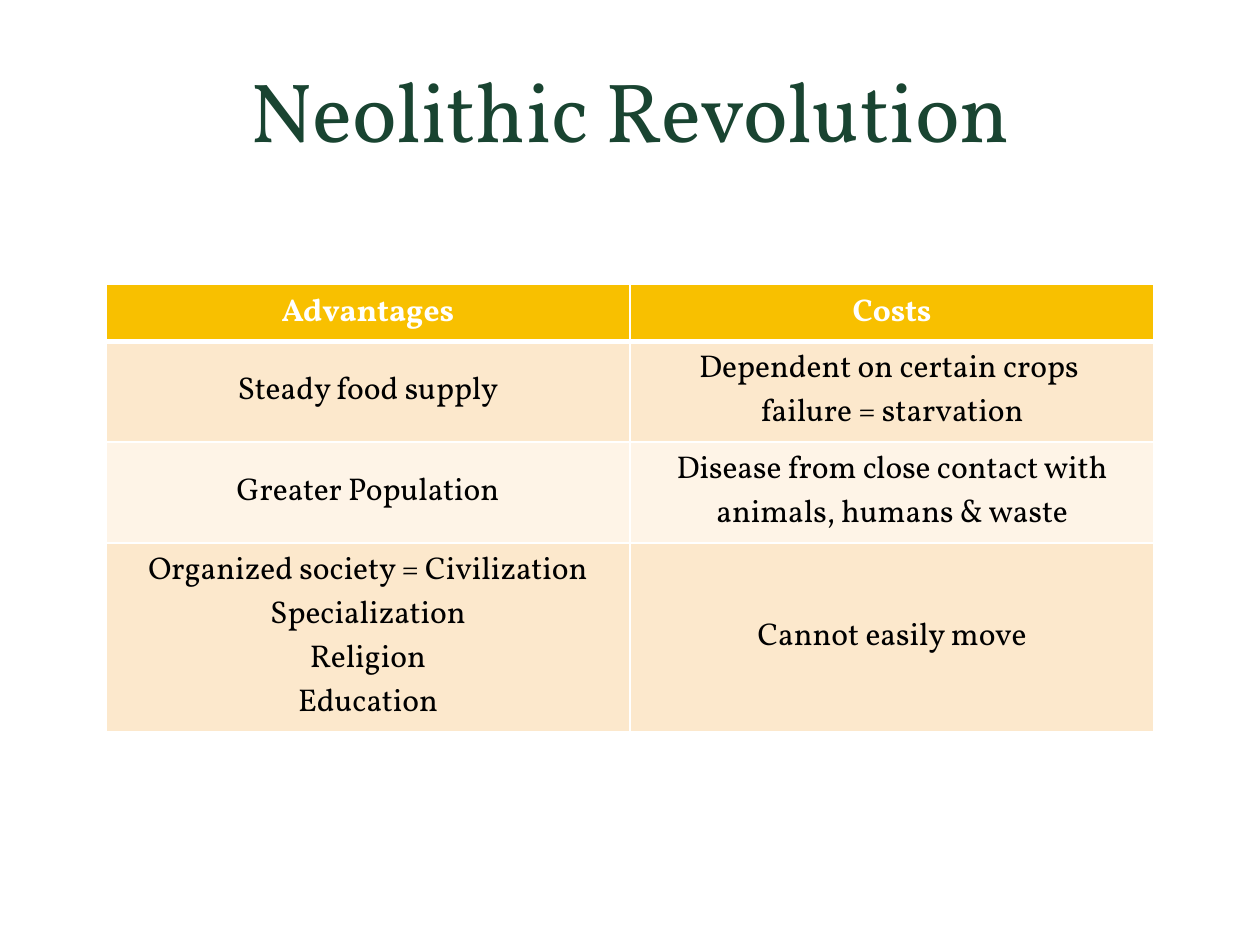
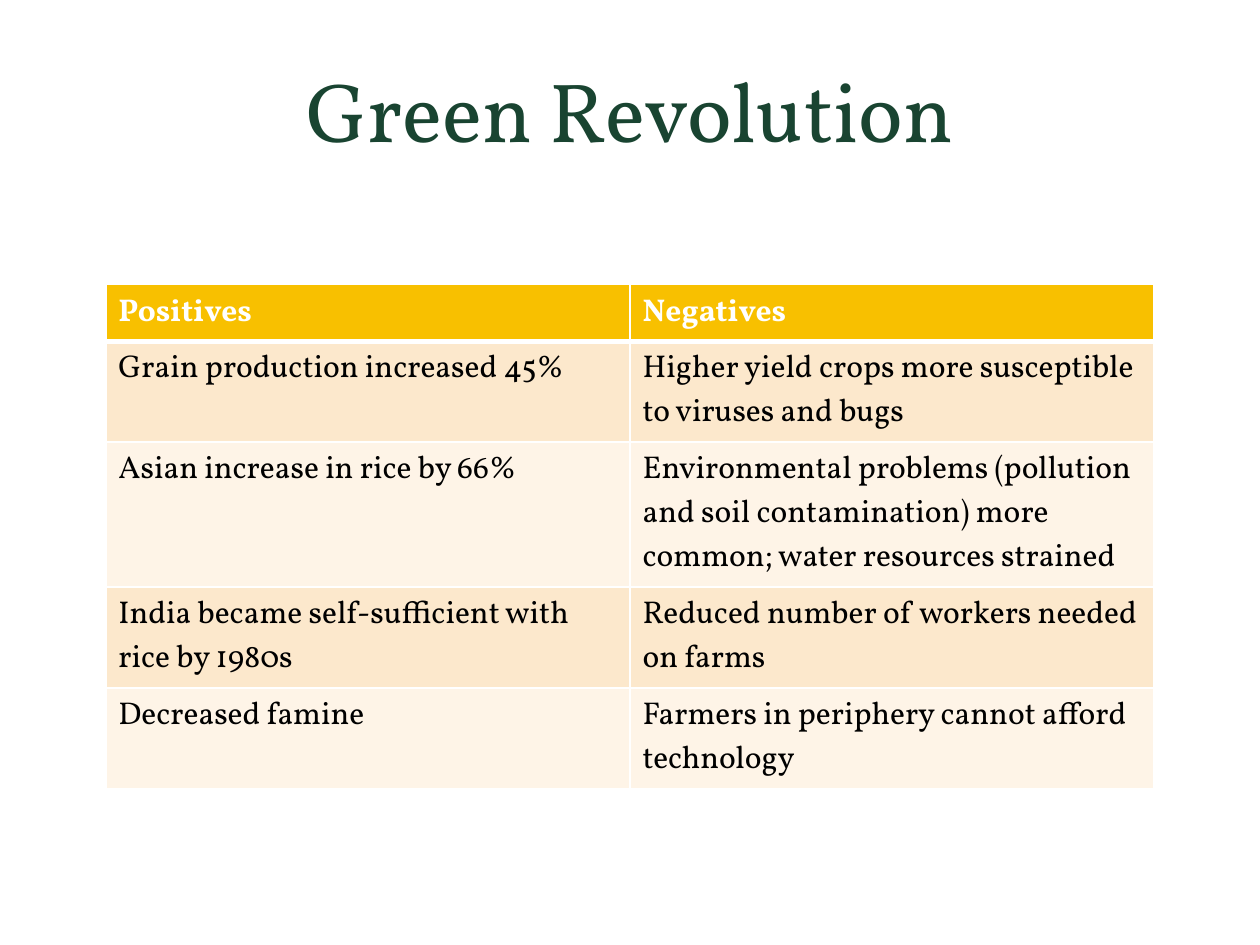
from dataclasses import dataclass

from lxml.etree import SubElement
from pptx import Presentation
from pptx.dml.color import RGBColor
from pptx.enum.text import MSO_ANCHOR, PP_ALIGN
from pptx.oxml.ns import qn
from pptx.util import Inches, Pt


@dataclass(frozen=True)
class Theme:
    """Colours, font and sizes shared by the slides."""
    font: str = "Vollkorn"
    title_color: str = "194431"
    header_fill: str = "F8C000"
    header_text: str = "FFFFFF"
    body_text: str = "000000"
    band_fills: tuple = ("FCE8CC", "FEF4E7")
    border: str = "FFFFFF"
    title_size: int = 48
    table_size: int = 18
    thin_line: int = 1
    thick_line: int = 3


THEME = Theme()
TITLE_BOX = (0.84, 0.09, 8.32, 1.55)
TABLE_BOX = (0.84, 2.26, 8.32)
LINE_HEIGHT = 0.35
ROW_PADDING = 0.1

NEOLITHIC_ROWS = [
    ("Advantages", "Costs"),
    ("Steady food supply", "Dependent on certain crops \nfailure = starvation"),
    ("Greater Population", "Disease from close contact with animals, humans & waste"),
    ("Organized society = Civilization\nSpecialization\nReligion\nEducation",
     "Cannot easily move"),
]
NEOLITHIC_LINES = (1, 2, 2, 4)
GREEN_ROWS = [
    ("Positives", "Negatives"),
    ("Grain production increased 45%",
     "Higher yield crops more susceptible to viruses and bugs"),
    ("Asian increase in rice by 66%",
     "Environmental problems (pollution and soil contamination) more common; "
     "water resources strained"),
    ("India became self-sufficient with rice by 1980s",
     "Reduced number of workers needed on farms"),
    ("Decreased famine", "Farmers in periphery cannot afford technology"),
]
GREEN_LINES = (1, 2, 3, 2, 2)


def write_text(text_frame, text, size, color, alignment, bold=False):
    """Set the text and format all its runs."""
    text_frame.text = text
    text_frame.word_wrap = True
    for paragraph in text_frame.paragraphs:
        paragraph.alignment = alignment
        for run in paragraph.runs:
            run.font.name = THEME.font
            run.font.size = Pt(size)
            run.font.bold = bold
            run.font.color.rgb = RGBColor.from_string(color)


def set_borders(cell, top, bottom):
    """Draw the four cell borders, before the fill is set."""
    properties = cell._tc.get_or_add_tcPr()
    thin = THEME.thin_line
    for side, width in (("L", thin), ("R", thin), ("T", top), ("B", bottom)):
        line = SubElement(properties, qn(f"a:ln{side}"), w=str(Pt(width)))
        fill = SubElement(line, qn("a:solidFill"))
        SubElement(fill, qn("a:srgbClr"), val=THEME.border)


def add_title(slide, box, text):
    """Place the centred slide title in its box."""
    shape = slide.shapes.add_textbox(*map(Inches, box))
    shape.text_frame.vertical_anchor = MSO_ANCHOR.MIDDLE
    write_text(shape.text_frame, text, THEME.title_size, THEME.title_color,
               PP_ALIGN.CENTER)


def add_comparison_table(slide, box, rows, line_counts, alignment, anchor):
    """Place a banded two-column table whose rows fit their line counts."""
    left, top, width = map(Inches, box)
    heights = [Inches(ROW_PADDING + LINE_HEIGHT * count) for count in line_counts]
    table = slide.shapes.add_table(
        len(rows), len(rows[0]), left, top, width, sum(heights)).table
    for row_index, (texts, height) in enumerate(zip(rows, heights)):
        table.rows[row_index].height = height
        is_header = row_index == 0
        fill = THEME.header_fill if is_header else THEME.band_fills[(row_index - 1) % 2]
        color = THEME.header_text if is_header else THEME.body_text
        top_line = THEME.thick_line if row_index == 1 else THEME.thin_line
        bottom_line = THEME.thick_line if is_header else THEME.thin_line
        for column_index, text in enumerate(texts):
            cell = table.cell(row_index, column_index)
            set_borders(cell, top_line, bottom_line)
            cell.fill.solid()
            cell.fill.fore_color.rgb = RGBColor.from_string(fill)
            cell.vertical_anchor = anchor
            write_text(cell.text_frame, text, THEME.table_size, color, alignment, is_header)


def add_comparison_slide(presentation, title, rows, line_counts, alignment, anchor):
    """Add a slide with a title above a comparison table."""
    slide = presentation.slides.add_slide(presentation.slide_layouts[6])
    add_title(slide, TITLE_BOX, title)
    add_comparison_table(slide, TABLE_BOX, rows, line_counts, alignment, anchor)


def main():
    """Build and save the presentation."""
    presentation = Presentation()
    presentation.slide_width = Inches(10)
    presentation.slide_height = Inches(7.5)
    add_comparison_slide(presentation, "Neolithic Revolution", NEOLITHIC_ROWS,
                         NEOLITHIC_LINES, PP_ALIGN.CENTER, MSO_ANCHOR.MIDDLE)
    add_comparison_slide(presentation, "Green Revolution", GREEN_ROWS,
                         GREEN_LINES, PP_ALIGN.LEFT, MSO_ANCHOR.TOP)
    presentation.save("out.pptx")


if __name__ == "__main__":
    main()
